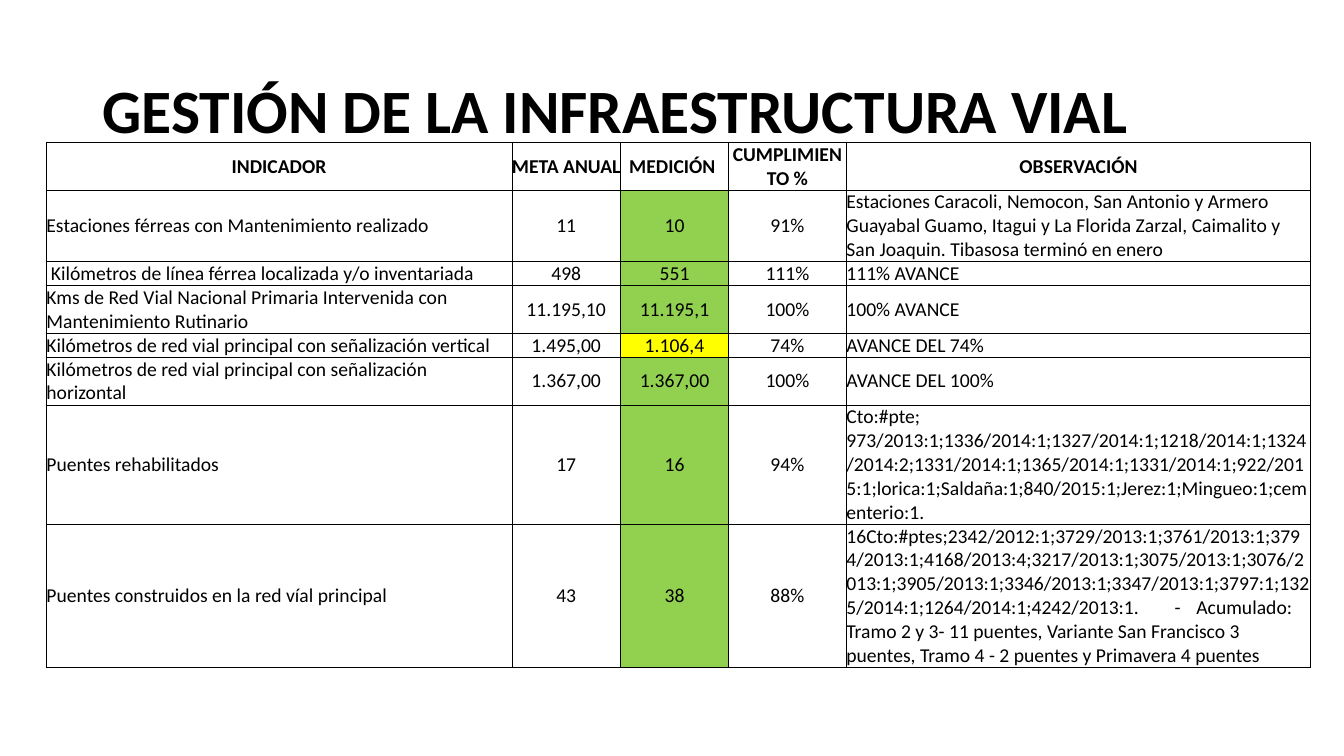
from lxml import etree
from pptx import Presentation
from pptx.dml.color import RGBColor
from pptx.enum.text import MSO_ANCHOR, MSO_AUTO_SIZE, PP_ALIGN
from pptx.oxml.ns import qn
from pptx.util import Cm, Pt

LEFT, CENTER = PP_ALIGN.LEFT, PP_ALIGN.CENTER
MIDDLE = MSO_ANCHOR.MIDDLE
NO_AUTOFIT = MSO_AUTO_SIZE.NONE
BLACK, WHITE, GREEN, YELLOW = "000000", "FFFFFF", "92D050", "FFFF00"
LINE_HEIGHT = 0.6

HEADERS = ["INDICADOR", "META ANUAL", "MEDICIÓN ", "CUMPLIMIENTO %", "OBSERVACIÓN"]
COLUMN_WIDTHS = [11.73, 2.74, 2.72, 2.97, 11.7]
ROW_LINES = [2, 3, 1, 2, 1, 2, 5, 6]
TAB_STOPS = [8.27, 8.82]
INDICATORS = [
    ["Estaciones férreas con Mantenimiento realizado", "11", "10", "91%",
     "Estaciones Caracoli, Nemocon, San Antonio y Armero Guayabal Guamo, Itagui y "
     "La Florida Zarzal, Caimalito y San Joaquin. Tibasosa terminó en enero"],
    [" Kilómetros de línea férrea localizada y/o inventariada", "498", "551", "111%",
     "111% AVANCE"],
    ["Kms de Red Vial Nacional Primaria Intervenida con Mantenimiento Rutinario",
     "11.195,10", "11.195,1", "100%", "100% AVANCE"],
    ["Kilómetros de red vial principal con señalización vertical",
     "1.495,00", "1.106,4", "74%", "AVANCE DEL 74%"],
    ["Kilómetros de red vial principal con señalización horizontal",
     "1.367,00", "1.367,00", "100%", "AVANCE DEL 100%"],
    ["Puentes rehabilitados", "17", "16", "94%",
     "Cto:#pte; 973/2013:1;1336/2014:1;1327/2014:1;1218/2014:1;1324/2014:2;"
     "1331/2014:1;1365/2014:1;1331/2014:1;922/2015:1;lorica:1;Saldaña:1;"
     "840/2015:1;Jerez:1;Mingueo:1;cementerio:1."],
    ["Puentes construidos en la red víal principal", "43", "38", "88%",
     "16Cto:#ptes;2342/2012:1;3729/2013:1;3761/2013:1;3794/2013:1;4168/2013:4;"
     "3217/2013:1;3075/2013:1;3076/2013:1;3905/2013:1;3346/2013:1;3347/2013:1;"
     "3797:1;1325/2014:1;1264/2014:1;4242/2013:1.\t-\tAcumulado: Tramo 2 y 3- "
     "11 puentes, Variante San Francisco 3 puentes, Tramo 4 - 2 puentes y "
     "Primavera 4 puentes"],
]


def write(tf, text, size=14, bold=False, align=LEFT, spacing=None):
    p = tf.paragraphs[0]
    p.alignment = align
    p.line_spacing = spacing
    r = p.add_run()
    r.text = text
    r.font.name = "Calibri"
    r.font.size = Pt(size)
    r.font.bold = bold
    r.font.color.rgb = RGBColor.from_string(BLACK)
    return p


def add_border(cell, side, width):
    tcPr = cell._tc.get_or_add_tcPr()
    ln = etree.SubElement(tcPr, qn("a:ln" + side), w=str(Pt(width)))
    fill = etree.SubElement(ln, qn("a:solidFill"))
    etree.SubElement(fill, qn("a:srgbClr"), val=BLACK)


prs = Presentation()
prs.slide_width, prs.slide_height = Cm(33.87), Cm(19.05)
s = prs.slides.add_slide(prs.slide_layouts[5])

title = s.shapes.title
title.left, title.top, title.width, title.height = Cm(2.33), Cm(1.01), Cm(29.21), Cm(3.68)
tf = title.text_frame
tf.auto_size = NO_AUTOFIT
tf.vertical_anchor = MIDDLE
write(tf, "GESTIÓN DE LA INFRAESTRUCTURA VIAL", size=44, bold=True, spacing=0.9)

rows = [HEADERS] + INDICATORS
table = s.shapes.add_table(len(rows), len(HEADERS), Cm(1.17), Cm(3.59),
                           Cm(sum(COLUMN_WIDTHS)), Cm(sum(ROW_LINES) * LINE_HEIGHT)).table
table.first_row = table.horz_banding = False
for column, width in zip(table.columns, COLUMN_WIDTHS):
    column.width = Cm(width)

for i, values in enumerate(rows):
    table.rows[i].height = Cm(ROW_LINES[i] * LINE_HEIGHT)
    is_header = i == 0
    for j, text in enumerate(values):
        cell = table.cell(i, j)
        cell.margin_left = cell.margin_right = cell.margin_top = cell.margin_bottom = 0
        cell.vertical_anchor = MIDDLE
        for side in "LRTB":
            add_border(cell, side, 1 if is_header and side == "T" else 0.5)
        if is_header or j in (1, 3, 4):
            cell.fill.background()
        else:
            measured = YELLOW if values[3] == "74%" else GREEN
            cell.fill.solid()
            cell.fill.fore_color.rgb = RGBColor.from_string(measured if j == 2 else WHITE)
        centered = is_header or j in (1, 2, 3)
        p = write(cell.text_frame, text, bold=is_header, align=CENTER if centered else LEFT)
        if "\t" in text:
            tabs = etree.SubElement(p._p.get_or_add_pPr(), qn("a:tabLst"))
            for stop in TAB_STOPS:
                etree.SubElement(tabs, qn("a:tab"), pos=str(Cm(stop)), algn="l")

prs.save("out.pptx")
